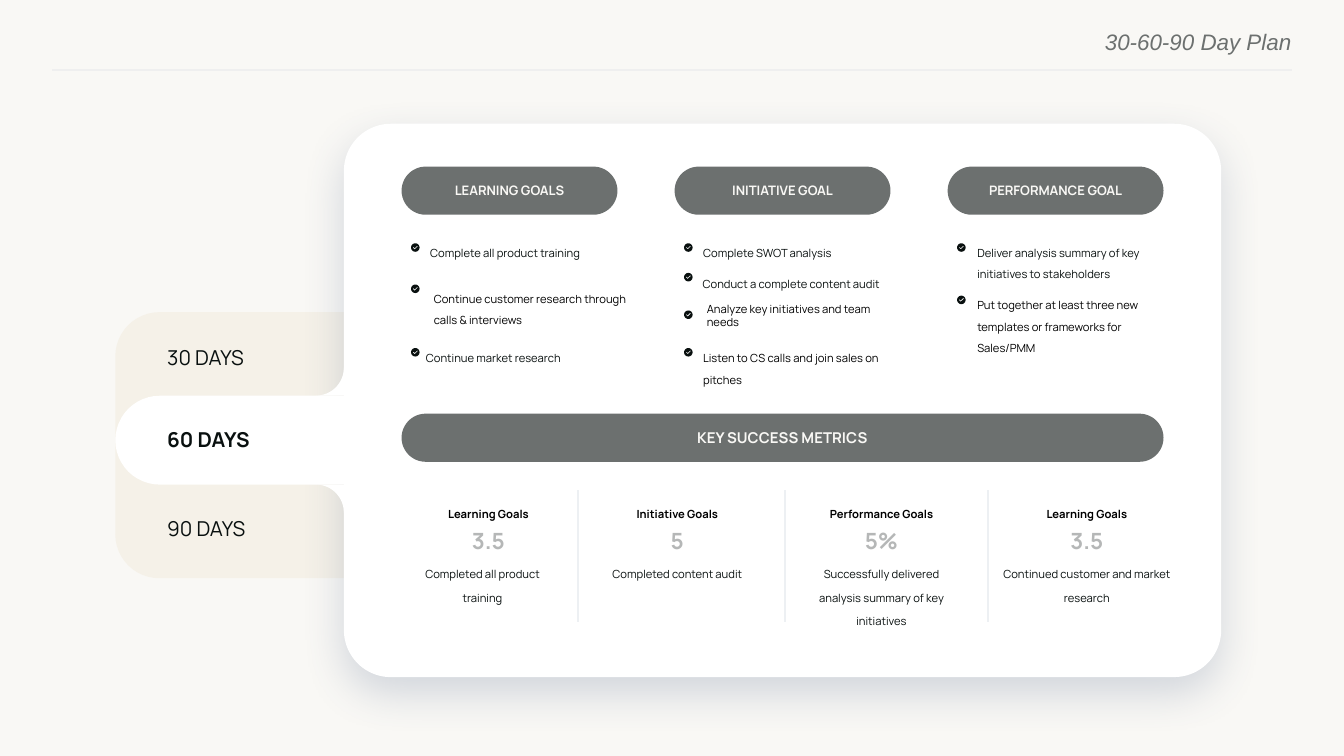
"""Builds a 30-60-90 day plan slide."""
import math
from dataclasses import dataclass

from pptx import Presentation
from pptx.dml.color import RGBColor
from pptx.enum import shapes, text
from pptx.oxml import ns, xmlchemy
from pptx.util import Cm, Pt


@dataclass(frozen=True)
class Theme:
    """Fonts, colours and type sizes."""
    font: str = "Manrope"
    title_font: str = "Arial"
    paper: str = "F9F8F5"
    white: str = "FFFFFF"
    sand: str = "F5F1E8"
    slate: str = "6C706F"
    ink: str = "09100F"
    black: str = "000000"
    mute: str = "B5B7B7"
    rule: str = "EFEFEF"
    divider: str = "EDF0F3"
    shade: str = "475D84"
    body: int = 6
    header: int = 7
    banner: int = 8
    tab: int = 11
    large: int = 12


@dataclass(frozen=True)
class Goal:
    """A checked goal, with offsets in cm from its column."""
    words: str
    mark: float
    left: float
    top: float
    height: float
    color: str = Theme.ink
    width: float = 4.1
    spacing: float = 1.62


@dataclass(frozen=True)
class Metric:
    """A success metric, with its centre and body width in cm."""
    heading: str
    value: str
    result: str
    centre: float
    width: float
    height: float
    shift: float = 0


T = Theme()
PILL = 0.91
GOALS = {
    "LEARNING GOALS": [
        Goal("Complete all product training", 1.45, 0.36, 1.24, 1.22),
        Goal("Continue customer research through calls & interviews", 2.23, 0.43, 2.11, 0.64, T.black),
        Goal("Continue market research", 3.43, 0.28, 3.23, 0.86)],
    "INITIATIVE GOAL": [
        Goal("Complete SWOT analysis", 1.45, 0.36, 1.24, 0.46),
        Goal("Conduct a complete content audit", 2.01, 0.35, 1.83, 0.46),
        Goal("Analyze key initiatives and team needs", 2.72, 0.43, 2.46, 0.7, T.black, 3.5, 1),
        Goal("Listen to CS calls and join sales on pitches", 3.43, 0.36, 3.23, 0.86, T.black)],
    "PERFORMANCE GOAL": [
        Goal("Deliver analysis summary of key initiatives to stakeholders", 1.45, 0.38, 1.24, 0.86, width=3.66),
        Goal("Put together at least three new templates or frameworks for Sales/PMM", 2.44, 0.38, 2.23, 1.22, T.black)],
}
METRICS = [
    Metric("Learning Goals", "3.5", "Completed all product training", 9.23, 3.25, 1.65, -0.11),
    Metric("Initiative Goals", "5", "Completed content audit", 12.8, 3.15, 1.65),
    Metric("Performance Goals", "5%", "Successfully delivered analysis summary of key initiatives", 16.66, 3.15, 1.27),
    Metric("Learning Goals", "3.5", "Continued customer and market research", 20.54, 3.66, 1.27),
]
CHECK = [(0.42, 0.72), (0.2, 0.5), (0.28, 0.42), (0.42, 0.57), (0.72, 0.27), (0.8, 0.35)]


def rgb(color):
    """Turn a hex string into a colour."""
    return RGBColor.from_string(color)


def paint(shape, color):
    """Give a shape a flat fill without line or shadow."""
    shape.fill.solid()
    shape.fill.fore_color.rgb = rgb(color)
    shape.line.fill.background()
    shape.shadow.inherit = False
    return shape


def write(frame, words, size, color, bold=False, italic=False, align=text.PP_ALIGN.LEFT,
          spacing=1, font=T.font, insets=(0.18, 0.1)):
    """Fill a text frame with one formatted paragraph."""
    frame.word_wrap = True
    frame.auto_size = text.MSO_AUTO_SIZE.NONE
    frame.margin_left = frame.margin_right = Cm(insets[0])
    frame.margin_top = frame.margin_bottom = Cm(insets[1])
    frame.text = words
    paragraph = frame.paragraphs[0]
    paragraph.alignment, paragraph.line_spacing = align, float(spacing)
    face = paragraph.runs[0].font
    face.name, face.size, face.bold, face.italic = font, Pt(size), bold, italic
    face.color.rgb = rgb(color)


def label(slide, box, words, size, color, **style):
    """Place a text box."""
    write(slide.shapes.add_textbox(*map(Cm, box)).text_frame, words, size, color, **style)


def block(slide, kind, box, color, *corners):
    """Place a preset shape with the given corner adjustments."""
    shape = paint(slide.shapes.add_shape(kind, *map(Cm, box)), color)
    for index, corner in enumerate(corners):
        shape.adjustments[index] = corner
    return shape


def left_rounded(slide, box, color, corner):
    """Place a rectangle whose two left corners are round."""
    left, top, width, height = box
    turned = (left + (width - height) / 2, top + (height - width) / 2, height, width)
    block(slide, shapes.MSO_SHAPE.ROUND_2_SAME_RECTANGLE, turned, color, corner, 0).rotation = 270


def outline(slide, contours, color):
    """Draw closed contours, given in cm, as one freeform."""
    contours = [[(Cm(x), Cm(y)) for x, y in contour] for contour in contours]
    builder = slide.shapes.build_freeform(*contours[0][0], scale=1.0)
    for index, contour in enumerate(contours):
        if index:
            builder.move_to(*contour[0])
        builder.add_line_segments(contour[1:], close=True)
    paint(builder.convert_to_shape(), color)


def arc(x, y, radius, start, stop, steps=24):
    """List the points of an arc between two angles in degrees."""
    angles = [math.radians(start + (stop - start) * step / steps) for step in range(steps + 1)]
    return [(x + radius * math.cos(angle), y + radius * math.sin(angle)) for angle in angles]


def rule(slide, start, end, color, weight):
    """Draw a straight line between two points in cm."""
    line = slide.shapes.add_connector(shapes.MSO_CONNECTOR.STRAIGHT, *map(Cm, start + end))
    line.line.color.rgb = rgb(color)
    line.line.width = Pt(weight)
    line.element.spPr.append(xmlchemy.OxmlElement("a:effectLst"))


def pill(slide, box, words, size):
    """Place a fully rounded bar with a centred heading."""
    frame = block(slide, shapes.MSO_SHAPE.ROUNDED_RECTANGLE, box, T.slate, 0.5).text_frame
    write(frame, words, size, T.paper, bold=True, align=text.PP_ALIGN.CENTER, insets=(0.1, 0))
    frame.vertical_anchor = text.MSO_ANCHOR.MIDDLE


def title_bar(slide, box):
    """Set the title above its rule."""
    left, top, width, height = box
    title = slide.shapes.title
    title.left, title.top, title.width, title.height = map(Cm, (left + width - 11.91, top, 11.91, height))
    write(title.text_frame, "30-60-90 Day Plan", T.large, T.slate, italic=True,
          align=text.PP_ALIGN.RIGHT, font=T.title_font, insets=(0, 0))
    title.text_frame.vertical_anchor = text.MSO_ANCHOR.TOP
    rule(slide, (left + width, 1.32), (left, 1.32), T.rule, 0.75)


def card(slide, box):
    """Place the white card with its soft shadow."""
    panel = block(slide, shapes.MSO_SHAPE.ROUNDED_RECTANGLE, box, T.white, 0.085)
    effects = panel.element.spPr.find(ns.qn("a:effectLst"))
    shadow = xmlchemy.OxmlElement("a:outerShdw")
    for key, value in {"blurRad": Pt(23), "dist": Pt(8.7), "dir": 5400000, "rotWithShape": 0}.items():
        shadow.set(key, str(value))
    tint = xmlchemy.OxmlElement("a:srgbClr")
    tint.set("val", T.shade)
    alpha = xmlchemy.OxmlElement("a:alpha")
    alpha.set("val", "22000")
    tint.append(alpha)
    shadow.append(tint)
    effects.append(shadow)


def day_tabs(slide, box):
    """Place the active tab, its fillets and the three day labels."""
    left, top, width, _ = box
    upper, depth, radius = top + 1.58, 1.68, 0.53
    right, lower = left + width, upper + depth
    left_rounded(slide, (left, upper, width, depth), T.white, 0.5)
    for edge, side in ((upper, -1), (lower, 1)):
        curve = arc(right - radius, edge + side * radius, radius, -side * 90, 0)
        outline(slide, [curve + [(right, edge)]], T.white)
    for days, offset in ((30, 0.53), (60, 2.08), (90, 3.75)):
        label(slide, (left + 0.8, top + offset, 3.53, 0.64), f"{days} DAYS", T.tab, T.ink, bold=days == 60)


def goal_column(slide, box, heading, goals):
    """Place a heading pill and its checked goals."""
    left, top, width, _ = box
    pill(slide, (left, top, width, PILL), heading, T.header)
    size = 0.16
    for goal in goals:
        x, y = left + 0.18, top + goal.mark
        disc = arc(x + size / 2, y + size / 2, size / 2, 0, 345, 23)
        outline(slide, [disc, [(x + size * u, y + size * v) for u, v in CHECK]], T.ink)
        label(slide, (left + goal.left, top + goal.top, goal.width, goal.height),
              goal.words, T.body, goal.color, spacing=goal.spacing)


def metrics_row(slide, box):
    """Place the dividers and the four success metrics."""
    _, top, _, height = box
    for x in (10.92, 14.83, 18.67):
        rule(slide, (x, top), (x, top + height), T.divider, 1)
    for metric in METRICS:
        parts = (
            (metric.heading, 0, -0.13, 2.5, 0.64, T.body, T.black, True, 2.38),
            (metric.result, metric.shift, 1.17, metric.width, metric.height, T.body, T.ink, False, 1.75),
            (metric.value, 0, 0.5, 1.2, 0.71, T.large, T.mute, True, 1.19))
        for words, shift, drop, width, depth, size, color, bold, spacing in parts:
            label(slide, (metric.centre + shift - width / 2, top + drop, width, depth), words, size, color,
                  bold=bold, spacing=spacing, align=text.PP_ALIGN.CENTER)


def main():
    """Build and save the slide."""
    deck = Presentation()
    deck.slide_width, deck.slide_height = Cm(25.4), Cm(14.29)
    slide = deck.slides.add_slide(deck.slide_layouts[5])
    slide.background.fill.solid()
    slide.background.fill.fore_color.rgb = rgb(T.paper)
    tabs = (2.18, 5.9, 4.32, 5.03)
    title_bar(slide, (0.99, 0.53, 23.42, 0.46))
    left_rounded(slide, tabs, T.sand, 0.193)
    card(slide, (6.5, 2.34, 16.58, 10.46))
    day_tabs(slide, tabs)
    for index, (heading, goals) in enumerate(GOALS.items()):
        goal_column(slide, (7.59 + 5.16 * index, 3.15, 4.08, 4.1), heading, goals)
    pill(slide, (7.59, 7.82, 14.4, PILL), "KEY SUCCESS METRICS", T.banner)
    metrics_row(slide, (7.59, 9.27, 14.4, 2.49))
    deck.save("out.pptx")


if __name__ == "__main__":
    main()
